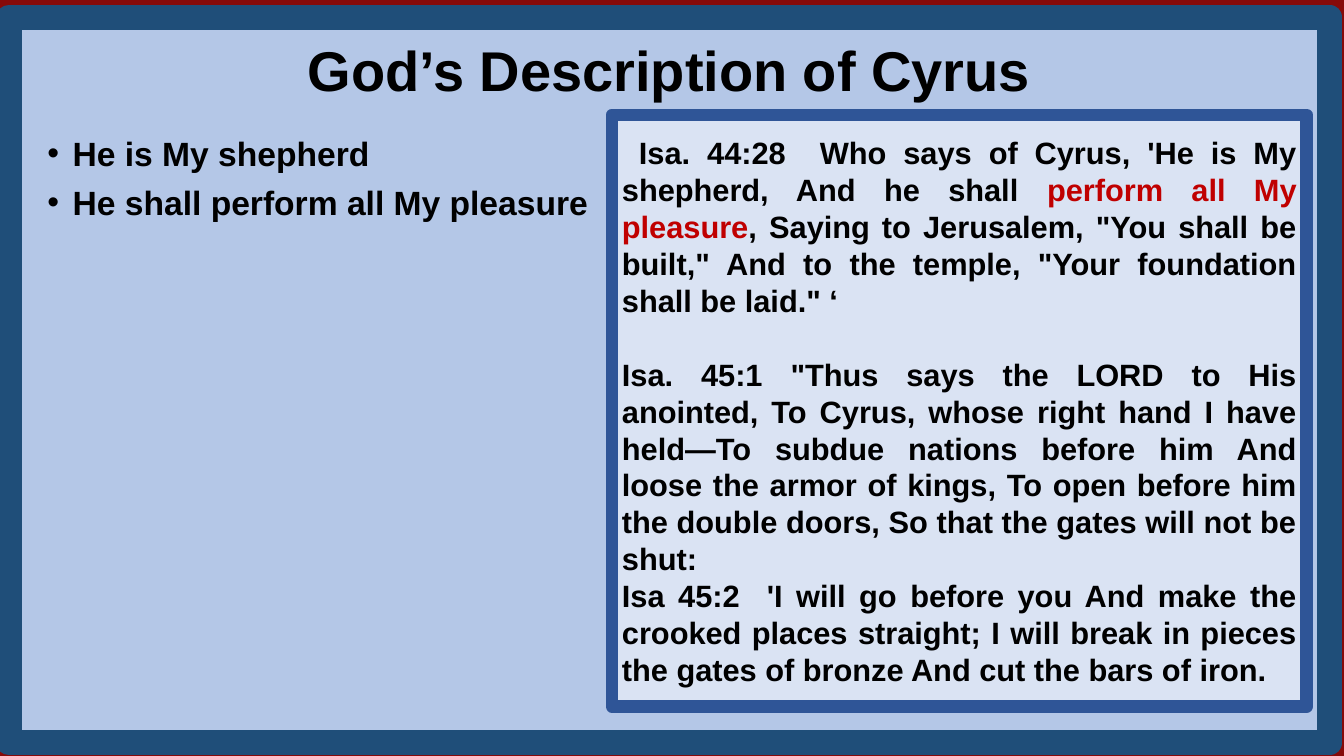
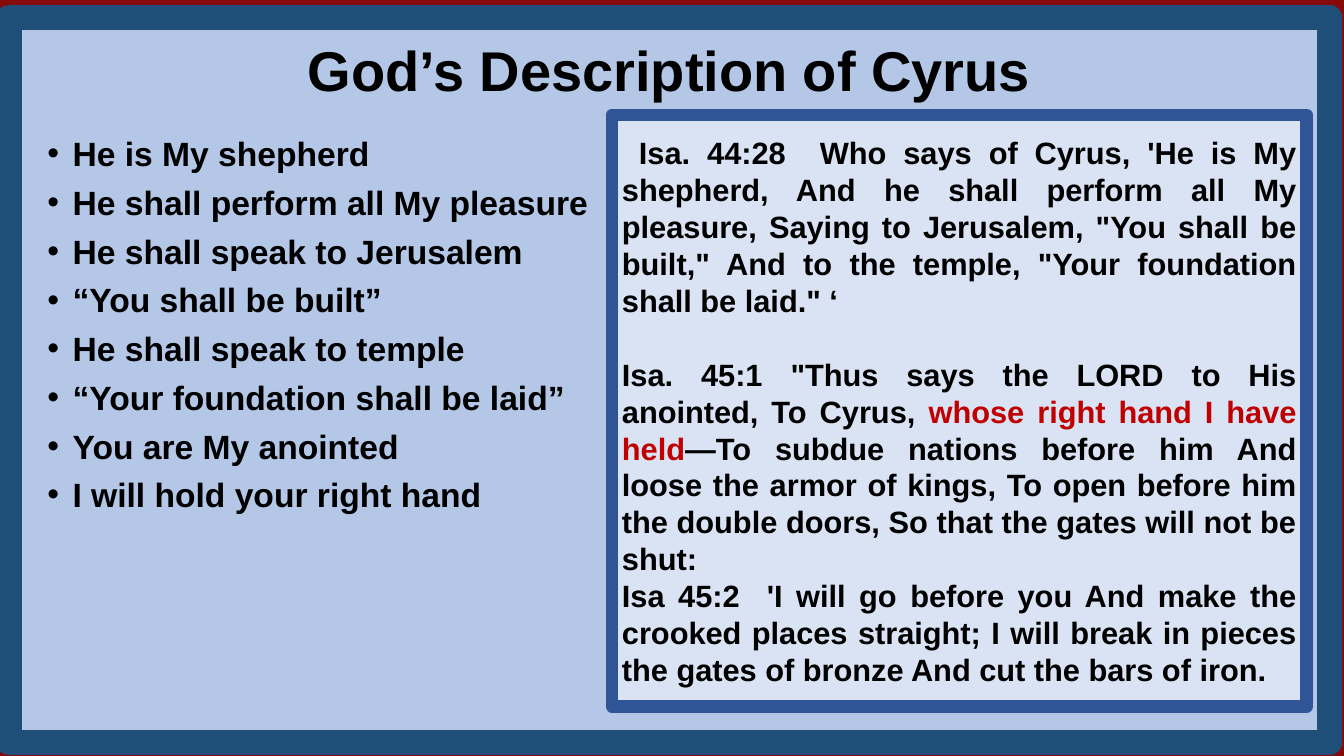
from pptx import Presentation
from pptx.dml.color import RGBColor
from pptx.enum.shapes import MSO_SHAPE
from pptx.enum.text import MSO_ANCHOR, MSO_AUTO_SIZE, PP_ALIGN
from pptx.util import Inches, Pt

MAROON = RGBColor(0x86, 0x0A, 0x0A)
NAVY = RGBColor(0x1F, 0x4E, 0x79)
LIGHT_BLUE = RGBColor(0xB4, 0xC7, 0xE7)
BLUE = RGBColor(0x2F, 0x55, 0x97)
PALE_BLUE = RGBColor(0xDA, 0xE3, 0xF3)
BLACK = RGBColor(0, 0, 0)
RED = RGBColor(0xC0, 0, 0)

FONT = "Arial"
LINE_HEIGHT = 1.2

HEADING = "God’s Description of Cyrus"
DESCRIPTIONS = [
    "He is My shepherd",
    "He shall perform all My pleasure",
    "He shall speak to Jerusalem",
    "“You shall be built”",
    "He shall speak to temple",
    "“Your foundation shall be laid”",
    "You are My anointed",
    "I will hold your right hand",
]
VERSES = [
    " Isa. 44:28  Who says of Cyrus, 'He is My shepherd, And he shall perform all My "
    "pleasure, Saying to Jerusalem, \"You shall be built,\" And to the temple, "
    "\"Your foundation shall be laid.\" ‘",
    "Isa. 45:1 \"Thus says the LORD to His anointed, To Cyrus, whose right hand I have "
    "held—To subdue nations before him And loose the armor of kings, To open before him "
    "the double doors, So that the gates will not be shut:",
    "Isa 45:2  'I will go before you And make the crooked places straight; I will break "
    "in pieces the gates of bronze And cut the bars of iron.",
]
# Number of descriptions shown, and the phrase stressed in the verses
STEPS = [
    (2, "perform all My pleasure"),
    (len(DESCRIPTIONS), "whose right hand I have held"),
]


def write_paragraphs(frame, texts, size, align, anchor=MSO_ANCHOR.TOP, after=0,
                     gaps=(), hanging=0, highlight=None):
    """Fill a text frame; gaps lists the paragraphs that follow an empty line."""
    frame.word_wrap = True
    frame.auto_size = MSO_AUTO_SIZE.NONE
    frame.vertical_anchor = anchor
    for index, text in enumerate(texts):
        paragraph = frame.paragraphs[0] if index == 0 else frame.add_paragraph()
        paragraph.alignment = align
        paragraph.line_spacing = Pt(size * LINE_HEIGHT)
        paragraph.space_before = Pt(size * LINE_HEIGHT if index in gaps else 0)
        paragraph.space_after = Pt(after)
        if hanging:
            properties = paragraph._p.get_or_add_pPr()
            properties.set("marL", str(Inches(hanging)))
            properties.set("indent", str(Inches(-hanging)))
        pieces = text.partition(highlight) if highlight else [text]
        for piece in filter(None, pieces):
            run = paragraph.add_run()
            run.text = piece
            run.font.name = FONT
            run.font.size = Pt(size)
            run.font.bold = True
            run.font.color.rgb = RED if piece == highlight else BLACK


def add_panel(slide, left, top, width, height, fill, line, weight):
    panel = slide.shapes.add_shape(MSO_SHAPE.RECTANGLE, Inches(left), Inches(top),
                                   Inches(width), Inches(height))
    panel.shadow.inherit = False
    panel.fill.solid()
    panel.fill.fore_color.rgb = fill
    panel.line.color.rgb = line
    panel.line.width = Pt(weight)
    # Behind the placeholders, in front of nothing else
    slide.shapes.element.insert(2, panel.element)
    return panel


prs = Presentation()
prs.slide_width = Inches(13.33)
prs.slide_height = Inches(7.5)
background = prs.slide_master.background.fill
background.solid()
background.fore_color.rgb = MAROON

for shown, stressed in STEPS:
    slide = prs.slides.add_slide(prs.slide_layouts[1])

    scripture = add_panel(slide, 6.07, 1.14, 6.89, 5.87, PALE_BLUE, BLUE, 9)
    write_paragraphs(scripture.text_frame, VERSES, 22, PP_ALIGN.JUSTIFY,
                     anchor=MSO_ANCHOR.MIDDLE, gaps=(1,), highlight=stressed)
    add_panel(slide, 0.09, 0.17, 13.1, 7.2, LIGHT_BLUE, NAVY, 18)

    title = slide.shapes.title
    title.left, title.top = Inches(0.26), Inches(0.3)
    title.width, title.height = Inches(12.75), Inches(0.77)
    write_paragraphs(title.text_frame, [HEADING], 40, PP_ALIGN.CENTER, after=5)

    points = slide.placeholders[1]
    points.left, points.top = Inches(0.37), Inches(1.27)
    points.width, points.height = Inches(5.68), Inches(0.1 + 0.48 * shown)
    write_paragraphs(points.text_frame, DESCRIPTIONS[:shown], 24, PP_ALIGN.LEFT,
                     after=6, hanging=0.25)

prs.save("out.pptx")
